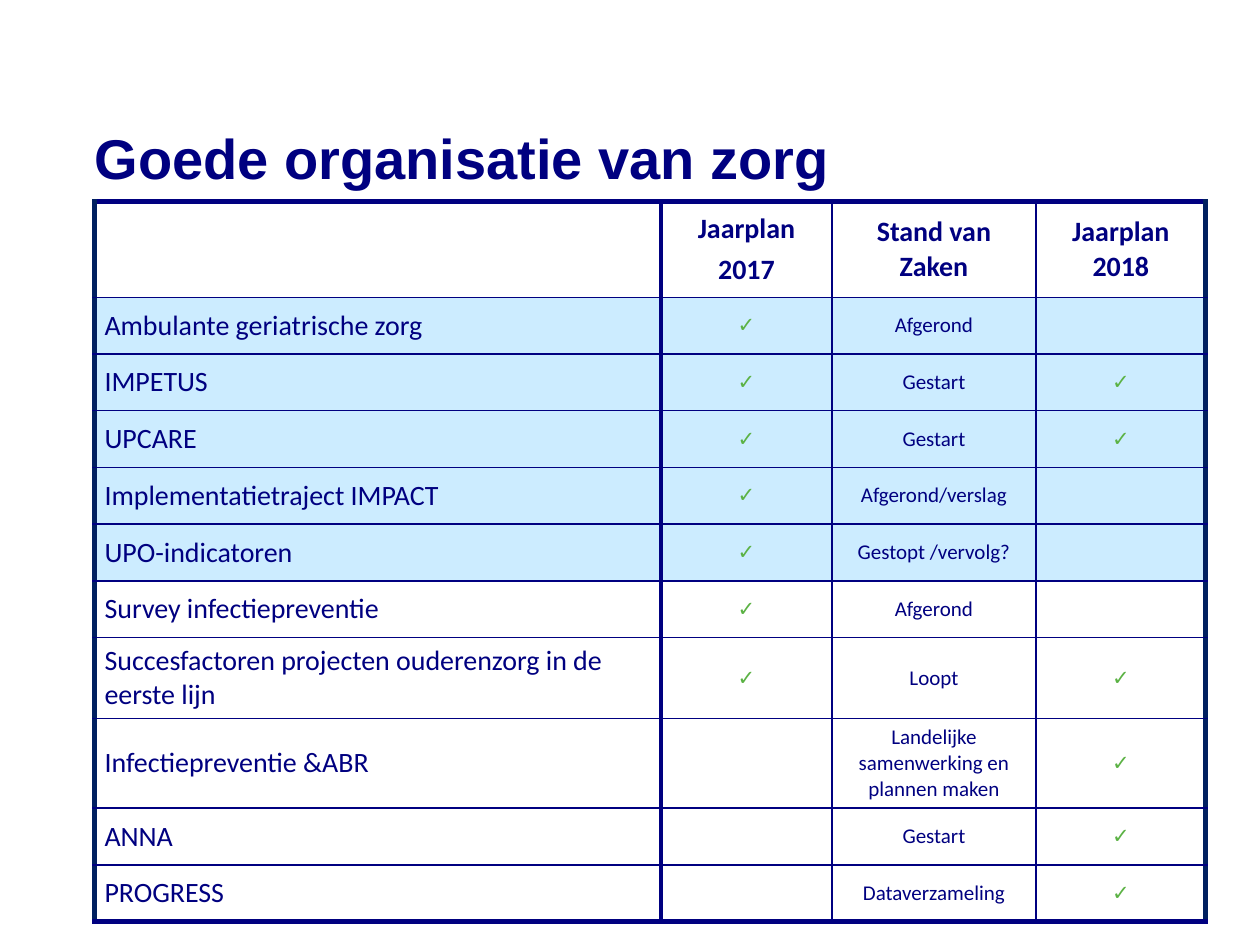
from dataclasses import dataclass

import pptx
import pptx.dml.color
import pptx.enum.text
import pptx.oxml
import pptx.oxml.ns
import pptx.util
from pptx.util import Inches

RGB = pptx.dml.color.RGBColor.from_string
ALIGN = pptx.enum.text.PP_ALIGN
MIDDLE = pptx.enum.text.MSO_ANCHOR.MIDDLE


@dataclass(frozen=True)
class Theme:
    navy: str = "000080"
    edge: str = "002060"
    green: str = "5BB244"
    highlight: str = "CCECFF"
    white: str = "FFFFFF"
    title_font: str = "Arial"
    table_font: str = "Calibri"
    title_size: int = 32
    label_size: int = 16
    status_size: int = 12
    thin: int = 1
    thick: int = 3


THEME = Theme()
CHECK = "✓"
HEADERS = ["", "Jaarplan\n2017", "Stand van Zaken", "Jaarplan 2018"]
# Project, in plan 2017, status, in plan 2018
PROJECTS = [
    ("Ambulante geriatrische zorg", True, "Afgerond", False),
    ("IMPETUS", True, "Gestart", True),
    ("UPCARE", True, "Gestart", True),
    ("Implementatietraject IMPACT", True, "Afgerond/verslag", False),
    ("UPO-indicatoren", True, "Gestopt /vervolg?", False),
    ("Survey infectiepreventie", True, "Afgerond", False),
    ("Succesfactoren projecten ouderenzorg in de eerste lijn", True, "Loopt", True),
    ("Infectiepreventie &ABR", False, "Landelijke samenwerking en plannen maken", True),
    ("ANNA", False, "Gestart", True),
    ("PROGRESS", False, "Dataverzameling", True),
]
HIGHLIGHTED_ROWS = 5
COLUMN_WIDTHS = [4.5, 1.36, 1.62, 1.35]
ROW_HEIGHTS = [0.76] + [0.45] * 6 + [0.64, 0.71] + [0.45] * 2


def style_font(font, name, size, color, bold):
    font.name = name
    font.size = pptx.util.Pt(size)
    font.color.rgb = RGB(color)
    font.bold = bold


def add_title(slide, text, left, top, width, height):
    title = slide.shapes.title
    title.left, title.top, title.width, title.height = left, top, width, height
    frame = title.text_frame
    frame.text = text
    frame.word_wrap = True
    frame.vertical_anchor = MIDDLE
    frame.margin_left = frame.margin_right = frame.margin_top = frame.margin_bottom = 0
    paragraph = frame.paragraphs[0]
    paragraph.alignment = ALIGN.LEFT
    style_font(paragraph.font, THEME.title_font, THEME.title_size, THEME.navy, True)


def set_borders(cell, borders):
    """Draw (side, colour, width) borders, listed in the order L, R, T, B."""
    properties = cell._tc.get_or_add_tcPr()
    for index, (side, color, width) in enumerate(borders):
        line = pptx.oxml.parse_xml(
            f'<a:ln{side} {pptx.oxml.ns.nsdecls("a")} w="{pptx.util.Pt(width)}">'
            f'<a:solidFill><a:srgbClr val="{color}"/></a:solidFill></a:ln{side}>'
        )
        properties.insert(index, line)


def cell_borders(row, column):
    """Thick outer frame, and a thick line after the project column."""
    last_row, last_column = len(PROJECTS), len(HEADERS) - 1
    return [
        ("L", THEME.edge if column == 0 else THEME.navy,
         THEME.thick if column <= 1 else THEME.thin),
        ("R", THEME.edge if column == last_column else THEME.navy,
         THEME.thick if column in (0, last_column) else THEME.thin),
        ("T", THEME.navy, THEME.thick if row == 0 else THEME.thin),
        ("B", THEME.navy, THEME.thick if row == last_row else THEME.thin),
    ]


def fill_cell(cell, text, row, column):
    highlighted = 1 <= row <= HIGHLIGHTED_ROWS
    cell.fill.solid()
    cell.fill.fore_color.rgb = RGB(THEME.highlight if highlighted else THEME.white)
    set_borders(cell, cell_borders(row, column))
    cell.vertical_anchor = MIDDLE
    cell.margin_left = cell.margin_right = Inches(0.08)
    cell.margin_top = cell.margin_bottom = Inches(0.05)
    if not text:
        return
    cell.text = text
    is_check = text == CHECK
    large = row == 0 or column == 0
    for index, paragraph in enumerate(cell.text_frame.paragraphs):
        paragraph.alignment = ALIGN.LEFT if column == 0 else ALIGN.CENTER
        if index:
            paragraph.space_before = pptx.util.Pt(3.4)
        style_font(
            paragraph.font,
            THEME.table_font,
            THEME.label_size if large else THEME.status_size,
            THEME.green if is_check else THEME.navy,
            row == 0 or is_check,
        )


def add_project_table(slide, left, top, width, height):
    rows = [HEADERS] + [
        (project, CHECK if planned_2017 else "", status, CHECK if planned_2018 else "")
        for project, planned_2017, status, planned_2018 in PROJECTS
    ]
    table = slide.shapes.add_table(
        len(rows), len(HEADERS), left, top, width, height
    ).table
    table.first_row = table.horz_banding = False
    for column, share in zip(table.columns, COLUMN_WIDTHS):
        column.width = int(width * share / sum(COLUMN_WIDTHS))
    for table_row, share in zip(table.rows, ROW_HEIGHTS):
        table_row.height = int(height * share / sum(ROW_HEIGHTS))
    for row, texts in enumerate(rows):
        for column, text in enumerate(texts):
            fill_cell(table.cell(row, column), text, row, column)


def main():
    presentation = pptx.Presentation()
    presentation.slide_width = Inches(10)
    presentation.slide_height = Inches(7.5)
    slide = presentation.slides.add_slide(presentation.slide_layouts[5])
    add_title(slide, "Goede organisatie van zorg",
              Inches(0.75), Inches(0.68), Inches(9.37), Inches(1.13))
    add_project_table(slide, Inches(0.75), Inches(1.6), Inches(8.82), Inches(5.71))
    presentation.save("out.pptx")


if __name__ == "__main__":
    main()
